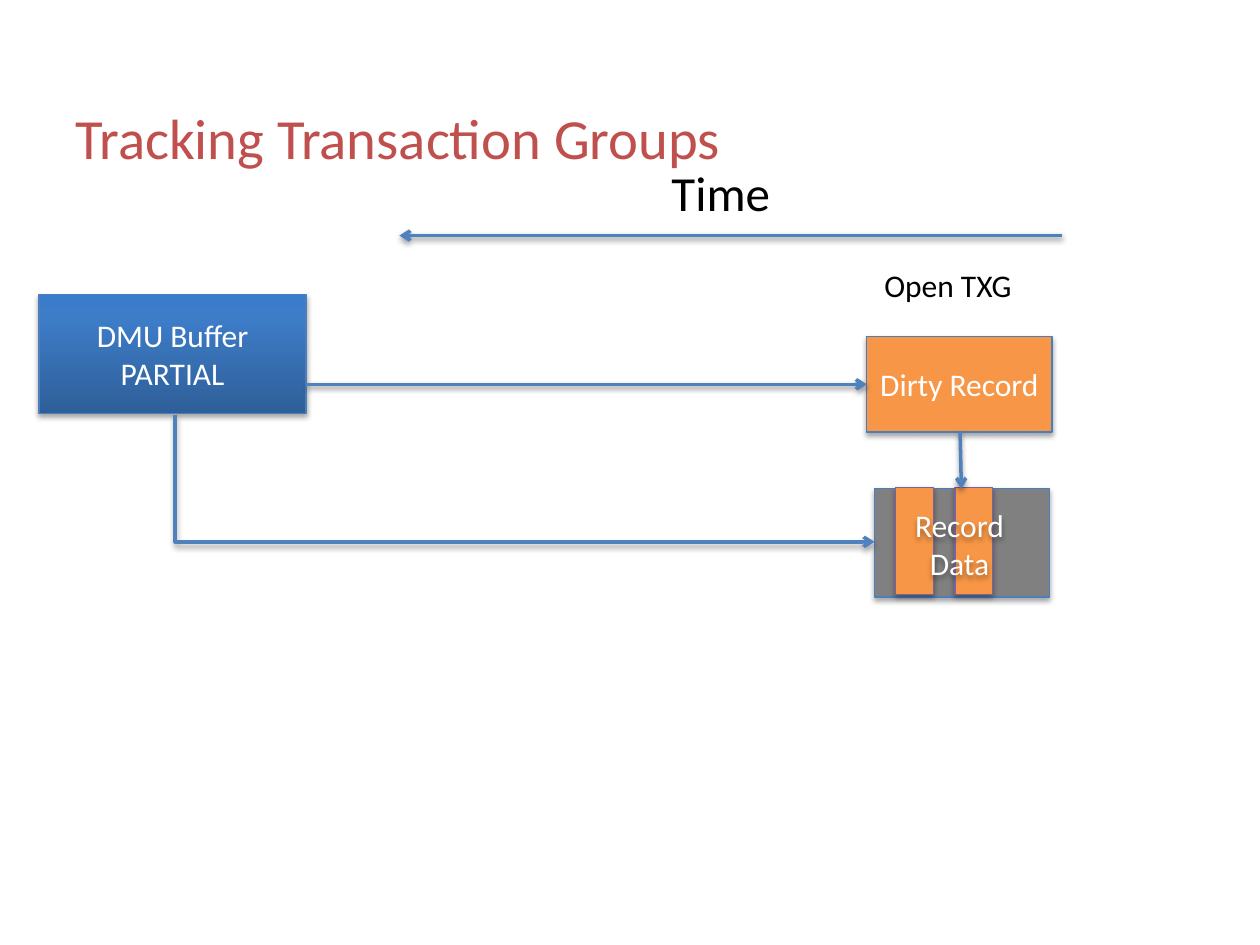
"""Build the "Tracking Transaction Groups" slide on a grid of 100 columns by 75 rows."""
from lxml.etree import SubElement
from pptx import Presentation
from pptx.dml.color import RGBColor
from pptx.enum.shapes import MSO_CONNECTOR, MSO_SHAPE
from pptx.enum.text import MSO_ANCHOR, MSO_AUTO_SIZE, PP_ALIGN
from pptx.oxml import parse_xml
from pptx.oxml.ns import nsdecls, qn
from pptx.util import Inches, Pt

COLS, ROWS = 100, 75
THEME = {
    "font": "Calibri", "title_size": 32.4, "time_size": 28, "body_size": 18,
    "title": "C0504D", "black": "000000", "white": "FFFFFF",
    "gray": "808080", "orange": "F79646", "edge": "4B7EBC",
    "purple": "7D60A0", "arrow": "4F81BD",
    "edge_width": 0.75, "arrow_width": 2,
    "blue_stops": [(0, "2F5F99"), (80, "3D7CC7"), (100, "3A7CCB")],
    "box_shadow": (35, 1.8), "arrow_shadow": (38, 1.6), "shadow_blur": 3.1,
}

STRIPE_TOP, STRIPE_W, STRIPE_H = 38.7, 3, 8.5
BOXES = [
    ((69.4, 38.8, 13.9, 8.6), "gray", "edge", ""),
    *[((x, STRIPE_TOP, STRIPE_W, STRIPE_H), "orange", "purple", "") for x in (75.8, 71.1)],
    ((69.2, 38.9, 13.9, 8.6), None, None, "Record Data"),
    ((3.1, 23.4, 21.2, 9.4), "blue_stops", "edge", "DMU Buffer\nPARTIAL"),
    ((68.8, 26.7, 14.7, 7.6), "orange", "edge", "Dirty Record"),
]
ARROWS = [
    ((24.3, 30.5), (68.8, 30.5), False),
    ((76.2, 34.3), (76.3, 38.8), False),
    ((13.9, 32.9), (69.4, 43), True),
    ((84.3, 18.7), (31.7, 18.7), False),
]
LABELS = [
    ((5, 7.5, 85, 6.7), "Tracking Transaction Groups", "title_size", "title",
     PP_ALIGN.LEFT, MSO_ANCHOR.MIDDLE, True, MSO_AUTO_SIZE.NONE),
    ((69.2, 20.6, 12.3, 4), "Open TXG", "body_size", "black",
     PP_ALIGN.LEFT, MSO_ANCHOR.TOP, False, MSO_AUTO_SIZE.SHAPE_TO_FIT_TEXT),
    ((43.8, 12.4, 26.8, 5.7), "Time", "time_size", "black",
     PP_ALIGN.CENTER, MSO_ANCHOR.TOP, True, MSO_AUTO_SIZE.SHAPE_TO_FIT_TEXT),
]

prs = Presentation()
prs.slide_width, prs.slide_height = Inches(10), Inches(7.5)
slide = prs.slides.add_slide(prs.slide_layouts[6])


def place(*lengths):
    units = (prs.slide_width / COLS, prs.slide_height / ROWS)
    return [round(v * units[i % 2]) for i, v in enumerate(lengths)]


def color(name):
    return RGBColor.from_string(THEME[name])


def add_shadow(s, kind):
    alpha, dist = THEME[kind]
    s._element.spPr.append(parse_xml(
        f'<a:effectLst {nsdecls("a")}><a:outerShdw blurRad="{Pt(THEME["shadow_blur"])}" '
        f'dist="{Pt(dist)}" dir="5400000" rotWithShape="0"><a:srgbClr val="{THEME["black"]}">'
        f'<a:alpha val="{alpha * 1000}"/></a:srgbClr></a:outerShdw></a:effectLst>'))


def fill_gradient(s, stops):
    s.fill.gradient()
    s.fill.gradient_angle = 90
    gs_list = s._element.spPr.find(qn("a:gradFill")).find(qn("a:gsLst"))
    for gs in list(gs_list):
        gs_list.remove(gs)
    for pos, rgb in stops:
        gs = SubElement(gs_list, qn("a:gs"), pos=str(pos * 1000))
        SubElement(gs, qn("a:srgbClr"), val=rgb)


def write(s, text, size, ink, align, anchor, wrap=True):
    tf = s.text_frame
    tf.text = text
    tf.word_wrap, tf.vertical_anchor = wrap, anchor
    for p in tf.paragraphs:
        p.alignment = align
        for r in p.runs:
            r.font.name, r.font.size = THEME["font"], Pt(THEME[size])
            r.font.color.rgb = color(ink)


def add_box(grid, fill, edge, text):
    s = slide.shapes.add_shape(MSO_SHAPE.RECTANGLE, *place(*grid))
    if fill is None:
        s.fill.background()
        s.line.fill.background()
    else:
        if fill == "blue_stops":
            fill_gradient(s, THEME[fill])
        else:
            s.fill.solid()
            s.fill.fore_color.rgb = color(fill)
        s.line.color.rgb = color(edge)
        s.line.width = Pt(THEME["edge_width"])
    add_shadow(s, "box_shadow")
    if text:
        write(s, text, "body_size", "white", PP_ALIGN.CENTER, MSO_ANCHOR.MIDDLE)


def add_arrow(start, end, bent):
    (x1, y1), (x2, y2) = start, end
    if bent:
        cx, cy, dx, dy = (x1 + x2) / 2, (y1 + y2) / 2, x2 - x1, y2 - y1
        x1, y1, x2, y2 = cx - dy / 2, cy - dx / 2, cx + dy / 2, cy + dx / 2
    kind = MSO_CONNECTOR.ELBOW if bent else MSO_CONNECTOR.STRAIGHT
    s = slide.shapes.add_connector(kind, *place(x1, y1, x2, y2))
    if bent:
        sp_pr = s._element.spPr
        sp_pr.find(qn("a:prstGeom")).set("prst", "bentConnector2")
        xfrm = sp_pr.find(qn("a:xfrm"))
        xfrm.set("rot", "16200000")
        xfrm.set("flipH", "1")
    s.line.color.rgb = color("arrow")
    s.line.width = Pt(THEME["arrow_width"])
    SubElement(s._element.spPr.find(qn("a:ln")), qn("a:tailEnd"), type="arrow")
    add_shadow(s, "arrow_shadow")


def add_label(grid, text, size, ink, align, anchor, wrap, auto_size):
    s = slide.shapes.add_textbox(*place(*grid))
    write(s, text, size, ink, align, anchor, wrap)
    s.text_frame.auto_size = auto_size


for box in BOXES:
    add_box(*box)
for arrow in ARROWS:
    add_arrow(*arrow)
for label in LABELS:
    add_label(*label)
prs.save("out.pptx")
